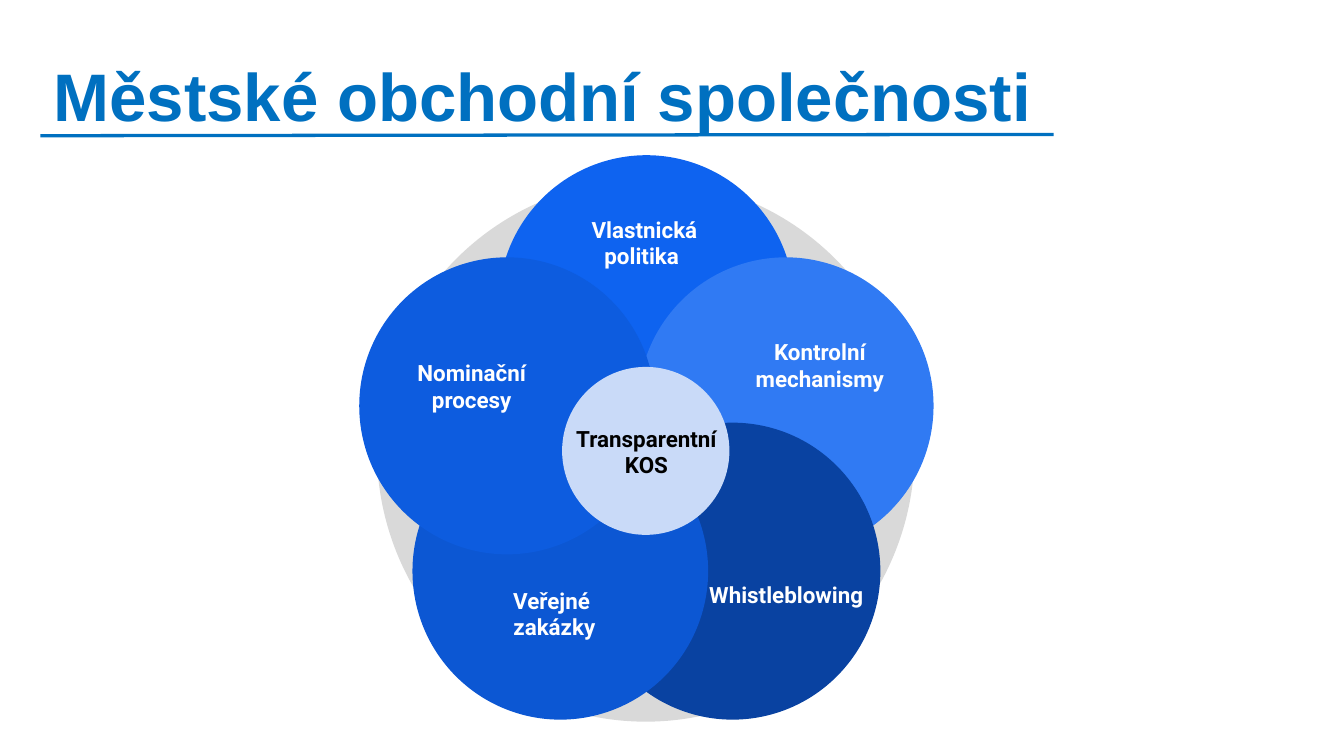
from math import cos, radians, sin

from lxml.etree import SubElement
from pptx import Presentation
from pptx.dml.color import RGBColor
from pptx.enum.shapes import MSO_CONNECTOR, MSO_SHAPE
from pptx.enum.text import MSO_ANCHOR, PP_ALIGN
from pptx.oxml.ns import qn
from pptx.util import Emu, Pt

PX = 4572
SLIDE_SIZE = (2000, 1125)

TITLE = "Městské obchodní společnosti"
TITLE_BOX = (60, 39, 1646, 204)
TITLE_FORMAT = {"name": "Arial", "size": Pt(36), "bold": True}
TITLE_COLOR = "0070C0"
UNDERLINE = (60, 202, 1568, 200)

BACKDROP = ((961, 671), (800, 806), "D9D9D9")
HUB = ((961, 671), (249, 250), "C9DAF8")
PETAL_COLORS = ["0E63F0", "307AF3", "0942A1", "0C57D3", "0D5CDF"]
PETAL_SIZE = (440, 442)
RING_CENTER = (962, 672)
RING_RADII = (218, 220)

LABEL_FORMAT = {"name": "Roboto", "size": Pt(12), "bold": True}
LABEL_HEIGHT = 136
LABELS = [
    (["Vlastnická politika "], 824, 293, 270, "FFFFFF"),
    (["Kontrolní mechanismy"], 1085, 475, 270, "FFFFFF"),
    (["Whistleblowing"], 1035, 817, 270, "FFFFFF"),
    (["Nominační procesy"], 567, 506, 270, "FFFFFF"),
    (["Veřejné ", "zakázky"], 667, 845, 316, "FFFFFF"),
    (["Transparentní KOS"], 804, 604, 316, "000000"),
]


def px(*lengths):
    return [Emu(round(length * PX)) for length in lengths]


def color(hex_value):
    return RGBColor.from_string(hex_value)


def add_circle(slide, center, size, fill):
    left, top = (middle - extent / 2 for middle, extent in zip(center, size))
    circle = slide.shapes.add_shape(MSO_SHAPE.OVAL, *px(left, top, *size))
    circle.shadow.inherit = False
    circle.fill.solid()
    circle.fill.fore_color.rgb = color(fill)
    circle.line.fill.background()


def add_text(slide, box, lines, font_format, text_color, align, inset_y):
    frame = slide.shapes.add_textbox(*px(*box)).text_frame
    frame_format = {
        "word_wrap": True,
        "vertical_anchor": MSO_ANCHOR.MIDDLE,
        "margin_left": Emu(20 * PX),
        "margin_right": Emu(20 * PX),
        "margin_top": Emu(inset_y * PX),
        "margin_bottom": Emu(inset_y * PX),
    }
    for key, value in frame_format.items():
        setattr(frame, key, value)
    frame.text = "\n".join(lines)
    for paragraph in frame.paragraphs:
        paragraph.alignment = align
        font = paragraph.runs[0].font
        for key, value in font_format.items():
            setattr(font, key, value)
        font.color.rgb = color(text_color)


def main():
    deck = Presentation()
    deck.slide_width, deck.slide_height = px(*SLIDE_SIZE)
    slide = deck.slides.add_slide(deck.slide_layouts[6])

    underline = slide.shapes.add_connector(MSO_CONNECTOR.STRAIGHT, *px(*UNDERLINE))
    underline.line.color.rgb = color(TITLE_COLOR)
    underline.line.width = Pt(1.75)
    SubElement(underline._element.spPr, qn("a:effectLst"))
    add_text(slide, TITLE_BOX, [TITLE], TITLE_FORMAT, TITLE_COLOR, PP_ALIGN.LEFT, 10)

    add_circle(slide, *BACKDROP)
    for index, fill in enumerate(PETAL_COLORS):
        angle = radians(360 / len(PETAL_COLORS) * index - 90)
        center = (
            RING_CENTER[0] + RING_RADII[0] * cos(angle),
            RING_CENTER[1] + RING_RADII[1] * sin(angle),
        )
        add_circle(slide, center, PETAL_SIZE, fill)
    add_circle(slide, *HUB)

    for lines, left, top, width, text_color in LABELS:
        box = (left, top, width, LABEL_HEIGHT)
        add_text(slide, box, lines, LABEL_FORMAT, text_color, PP_ALIGN.CENTER, 20)

    deck.save("out.pptx")


if __name__ == "__main__":
    main()
